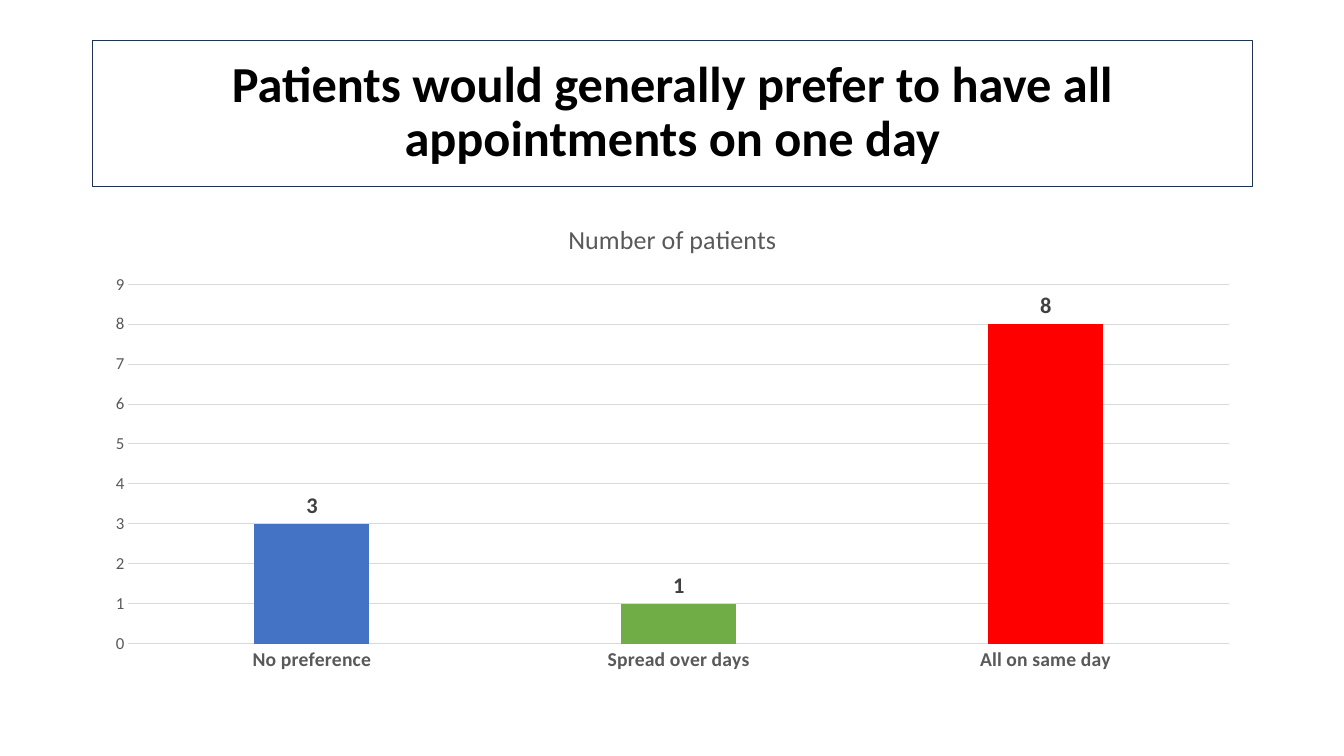
"""Build a slide with a column chart of patients' appointment preferences."""
from pptx import Presentation
from pptx.chart.data import CategoryChartData
from pptx.dml.color import RGBColor
from pptx.enum.chart import XL_CHART_TYPE, XL_LABEL_POSITION, XL_TICK_MARK
from pptx.enum.text import MSO_ANCHOR, MSO_AUTO_SIZE, PP_ALIGN
from pptx.util import Inches, Pt

COLUMN = XL_CHART_TYPE.COLUMN_CLUSTERED
OUTSIDE = XL_LABEL_POSITION.OUTSIDE_END
NO_TICK = XL_TICK_MARK.NONE
MIDDLE = MSO_ANCHOR.MIDDLE
FIXED = MSO_AUTO_SIZE.NONE
CENTER = PP_ALIGN.CENTER

TITLE = "Patients would generally prefer to have all appointments on one day"
NAME = "Number of patients"
BARS = [
    ("No preference", 3, "blue"),
    ("Spread over days", 1, "green"),
    ("All on same day", 8, "red"),
]
COLORS = {
    "black": "000000", "navy": "1E3256", "gray": "595959", "dark": "404040",
    "pale": "D9D9D9", "blue": "4472C4", "green": "70AD47", "red": "FF0000",
}
FACE = "Calibri"
WIDE, HIGH = 13.33, 7.5
LEFT, SPAN = 0.92, 11.5
ROWS = {"title": (0.4, 1.45), "chart": (2, 4.76)}


def color(name):
    return RGBColor.from_string(COLORS[name])


def style(font, size, name, bold=False):
    font.name, font.size, font.bold = FACE, Pt(size), bold
    font.color.rgb = color(name)


def rule(line, name):
    line.color.rgb = color(name)
    line.width = Pt(0.75)


def place(row):
    top, tall = ROWS[row]
    return [Inches(n) for n in (LEFT, top, SPAN, tall)]


def add_title(slide):
    box = slide.shapes.title
    box.left, box.top, box.width, box.height = place("title")
    rule(box.line, "navy")
    frame = box.text_frame
    frame.text = TITLE
    frame.word_wrap = True
    frame.auto_size = FIXED
    frame.vertical_anchor = MIDDLE
    para = frame.paragraphs[0]
    para.alignment = CENTER
    para.line_spacing = 0.9
    style(para.font, 36, "black", True)


def add_chart(slide):
    data = CategoryChartData()
    data.categories = [bar[0] for bar in BARS]
    data.add_series(NAME, [bar[1] for bar in BARS])
    chart = slide.shapes.add_chart(COLUMN, *place("chart"), data).chart
    style(chart.font, 10, "black")
    chart.has_legend = False
    chart.has_title = True
    head = chart.chart_title
    head.include_in_layout = False
    head.text_frame.text = NAME
    style(head.text_frame.paragraphs[0].font, 18.6, "gray")

    cats, vals = chart.category_axis, chart.value_axis
    for axis, size, bold in ((cats, 14, True), (vals, 12, False)):
        axis.major_tick_mark = axis.minor_tick_mark = NO_TICK
        style(axis.tick_labels.font, size, "gray", bold)
    rule(cats.format.line, "pale")
    vals.format.line.fill.background()
    vals.minimum_scale, vals.maximum_scale, vals.major_unit = 0, 9, 1
    vals.has_major_gridlines = True
    rule(vals.major_gridlines.format.line, "pale")

    plot = chart.plots[0]
    plot.gap_width, plot.overlap = 219, -27
    plot.vary_by_categories = False
    series = plot.series[0]
    series.invert_if_negative = False
    for i, (_, _, name) in enumerate(BARS):
        fill = series.points[i].format.fill
        fill.solid()
        fill.fore_color.rgb = color(name)
    labels = series.data_labels
    labels.show_value = True
    labels.position = OUTSIDE
    style(labels.font, 16, "dark", True)


def main():
    deck = Presentation()
    deck.slide_width, deck.slide_height = Inches(WIDE), Inches(HIGH)
    slide = deck.slides.add_slide(deck.slide_layouts.get_by_name("Title Only"))
    add_title(slide)
    add_chart(slide)
    deck.save("out.pptx")


if __name__ == "__main__":
    main()
